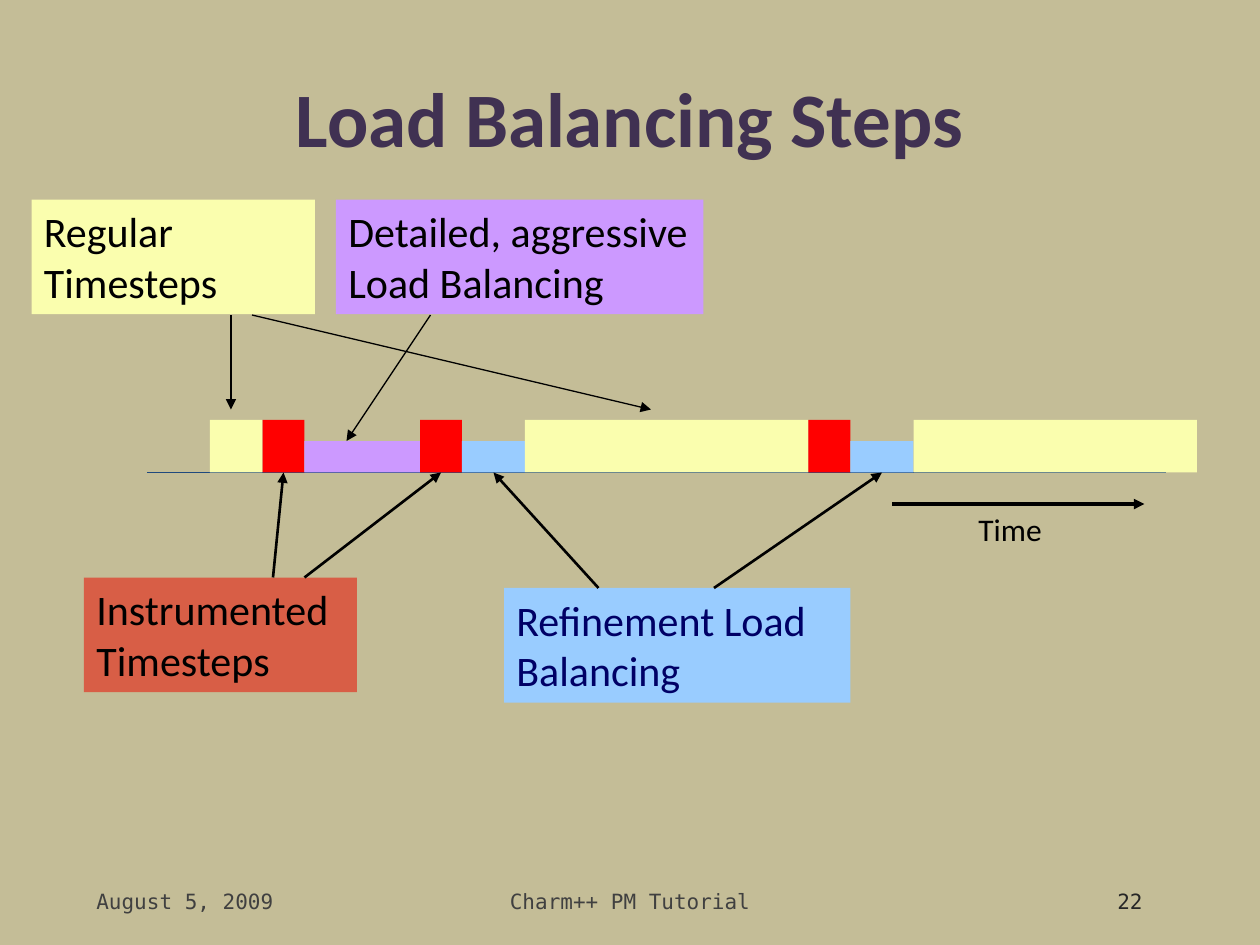
from pptx import Presentation
from pptx.dml.color import RGBColor
from pptx.enum.shapes import MSO_CONNECTOR, MSO_SHAPE
from pptx.enum.text import MSO_ANCHOR, PP_ALIGN
from pptx.oxml.ns import qn
from pptx.util import Pt
from lxml.etree import SubElement

TAN = RGBColor(0xC4, 0xBD, 0x97)
PURPLE = RGBColor(0x40, 0x31, 0x52)
BLACK = RGBColor(0, 0, 0)
NAVY = RGBColor(0, 0, 0x66)
AXIS_BLUE = RGBColor(0x1F, 0x49, 0x7D)
YELLOW = RGBColor(0xFA, 0xFE, 0xAE)
RED = RGBColor(0xFF, 0, 0)
BRICK = RGBColor(0xD8, 0x5E, 0x46)
LILAC = RGBColor(0xCC, 0x99, 0xFF)
SKY = RGBColor(0x99, 0xCC, 0xFF)
GRAY = RGBColor(0x40, 0x40, 0x40)
DARK_GRAY = RGBColor(0x26, 0x26, 0x26)
SANS, MONO = "Calibri", "DejaVu Sans Mono"

TALL, LOW = 30, 18
SEGMENTS = [  # name, width, height, colour
    ("regular 1", 30, TALL, YELLOW),
    ("instrumented 1", 24, TALL, RED),
    ("aggressive", 66, LOW, LILAC),
    ("instrumented 2", 24, TALL, RED),
    ("refinement 1", 36, LOW, SKY),
    ("regular 2", 162, TALL, YELLOW),
    ("instrumented 3", 24, TALL, RED),
    ("refinement 2", 36, LOW, SKY),
    ("regular 3", 162, TALL, YELLOW),
]


def write(sp, text, size, color, font=SANS, align=PP_ALIGN.LEFT,
          anchor=MSO_ANCHOR.TOP, bold=False):
    tf = sp.text_frame
    tf.word_wrap = True
    tf.vertical_anchor = anchor
    tf.text = text
    p = tf.paragraphs[0]
    p.alignment = align
    f = p.runs[0].font
    f.name, f.size, f.bold = font, Pt(size), bold
    f.color.rgb = color


def add_rect(slide, x, y, w, h, color):
    sp = slide.shapes.add_shape(MSO_SHAPE.RECTANGLE, Pt(x), Pt(y), Pt(w), Pt(h))
    sp.shadow.inherit = False
    sp.fill.solid()
    sp.fill.fore_color.rgb = color
    sp.line.fill.background()
    return sp


def add_line(slide, start, end, width, color=BLACK, arrow=True):
    ln = slide.shapes.add_connector(MSO_CONNECTOR.STRAIGHT, *map(Pt, start + end))
    ln.line.color.rgb = color
    ln.line.width = Pt(width)
    if arrow:
        SubElement(ln.line._get_or_add_ln(), qn("a:tailEnd"), type="triangle")
    SubElement(ln._element.spPr, qn("a:effectLst"))
    return ln


def add_title(slide, x, y, w, h):
    sp = slide.shapes.title
    sp.left, sp.top, sp.width, sp.height = Pt(x), Pt(y), Pt(w), Pt(h)
    write(sp, "Load Balancing Steps", 44, PURPLE, align=PP_ALIGN.CENTER,
          anchor=MSO_ANCHOR.MIDDLE, bold=True)


def add_timeline(slide, x, baseline, w):
    """Draw the axis and the bars standing on it; return the bars by name."""
    add_line(slide, (x, baseline), (x + w, baseline), 0.75, AXIS_BLUE, arrow=False)
    bars = {}
    left = x + 36
    for name, width, height, color in SEGMENTS:
        bars[name] = add_rect(slide, left, baseline - height, width, height, color)
        left += width
    return bars


def add_callout(slide, x, y, w, text, fill, color=BLACK):
    sp = add_rect(slide, x, y, w, 65.5, fill)
    write(sp, text, 24, color)


def add_upper_callouts(slide, x, y):
    add_callout(slide, x, y, 162, "Regular Timesteps", YELLOW)
    add_callout(slide, x + 174, y, 210, "Detailed, aggressive Load Balancing", LILAC)
    for from_x, to_x, drop in ((114, 114, 54), (126, 354, 54), (228, 180, 72)):
        add_line(slide, (x + from_x, y + 66), (x + to_x, y + 66 + drop), 0.75)


def add_lower_callout(slide, x, y, w, text, fill, color, targets):
    """Draw a callout with arrows from its top edge to the bars above it."""
    add_callout(slide, x, y, w, text, fill, color)
    for dx, bar in targets:
        ln = add_line(slide, (x + dx, y), (x + dx, y), 1.5)
        ln.end_connect(bar, 2)


def add_time_arrow(slide, x, y, w):
    add_line(slide, (x, y), (x + w, y), 2)
    sp = slide.shapes.add_textbox(Pt(x + 42), Pt(y), Pt(72), Pt(31))
    write(sp, "Time", 18, BLACK)


def add_footer(slide, x, y, h):
    items = (
        (0, 156, "August 5, 2009", GRAY, PP_ALIGN.LEFT),
        (198, 228, "Charm++ PM Tutorial", GRAY, PP_ALIGN.CENTER),
        (468, 144, "22", DARK_GRAY, PP_ALIGN.RIGHT),
    )
    for dx, w, text, color, align in items:
        sp = slide.shapes.add_textbox(Pt(x + dx), Pt(y), Pt(w), Pt(h))
        write(sp, text, 12, color, MONO, align, MSO_ANCHOR.MIDDLE)


def main():
    prs = Presentation()
    prs.slide_width, prs.slide_height = Pt(720), Pt(540)
    slide = prs.slides.add_slide(prs.slide_layouts[5])
    slide.background.fill.solid()
    slide.background.fill.fore_color.rgb = TAN

    add_title(slide, 36, 21.6, 648, 90)
    bars = add_timeline(slide, 84, 270, 582)
    add_upper_callouts(slide, 18, 114)
    add_lower_callout(slide, 48, 330, 156, "Instrumented Timesteps", BRICK, BLACK,
                      ((108, bars["instrumented 1"]), (126, bars["instrumented 2"])))
    add_lower_callout(slide, 288, 336, 198, "Refinement Load Balancing", SKY, NAVY,
                      ((54, bars["refinement 1"]), (120, bars["refinement 2"])))
    add_time_arrow(slide, 510, 288, 144)
    add_footer(slide, 48, 500.5, 28.75)
    prs.save("out.pptx")


if __name__ == "__main__":
    main()
